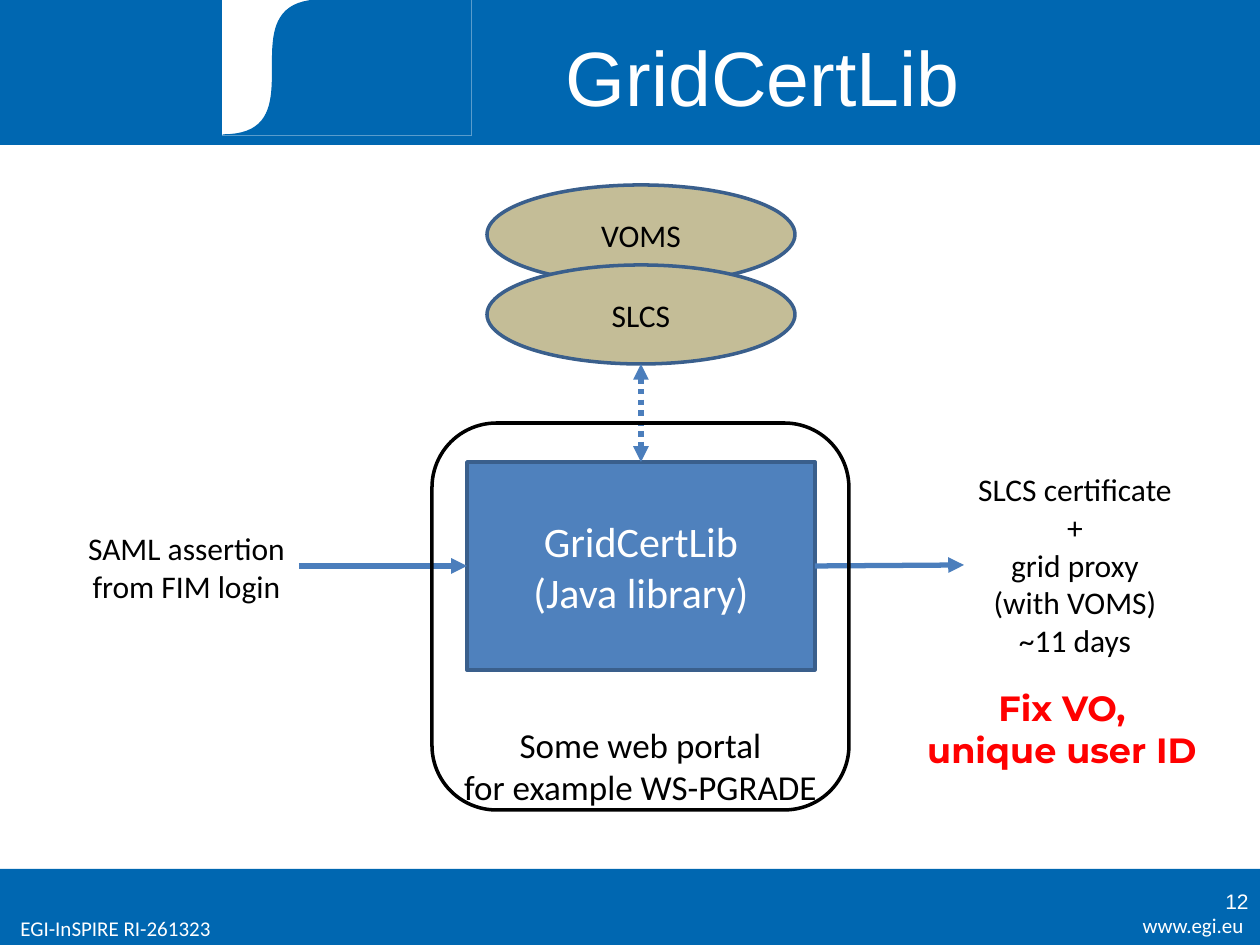
from lxml import etree
from pptx import Presentation
from pptx.dml.color import RGBColor
from pptx.enum.dml import MSO_LINE
from pptx.enum.shapes import MSO_CONNECTOR, MSO_SHAPE
from pptx.enum.text import MSO_ANCHOR, PP_ALIGN
from pptx.oxml.ns import qn
from pptx.util import Pt

RECT, OVAL, ROUND = MSO_SHAPE.RECTANGLE, MSO_SHAPE.OVAL, MSO_SHAPE.ROUNDED_RECTANGLE
LEFT, CENTER, RIGHT = PP_ALIGN.LEFT, PP_ALIGN.CENTER, PP_ALIGN.RIGHT
TOP, MIDDLE = MSO_ANCHOR.TOP, MSO_ANCHOR.MIDDLE
COLORS = {
    "band": "0067B1", "white": "FFFFFF", "black": "000000", "red": "FF0000",
    "box": "4F81BD", "edge": "3A5F8C", "arrow": "4B7EBC", "service": "C4BD97",
}
EMU_PER_PX = 914400 / 126


def px(n):
    return round(n * EMU_PER_PX)


def rgb(name):
    return RGBColor.from_string(COLORS[name])


def paint(s, fill, line, width):
    s.shadow.inherit = False
    if fill:
        s.fill.solid()
        s.fill.fore_color.rgb = rgb(fill)
    else:
        s.fill.background()
    if line:
        s.line.color.rgb = rgb(line)
        s.line.width = Pt(width)
    else:
        s.line.fill.background()


def add_shape(slide, kind, box, fill=None, line=None, width=2.0):
    s = slide.shapes.add_shape(kind, *map(px, box))
    paint(s, fill, line, width)
    return s


def write(s, lines, size, color="black", align=CENTER, anchor=MIDDLE,
          font="Calibri", bold=False, pad=6):
    """Set lines as one paragraph, parted by line breaks."""
    tf = s.text_frame
    tf.word_wrap = True
    tf.vertical_anchor = anchor
    tf.margin_top = tf.margin_bottom = px(pad)
    p = tf.paragraphs[0]
    p.alignment = align
    for i, line in enumerate(lines):
        if i:
            p.add_line_break()
        r = p.add_run()
        r.text = line
        r.font.size = Pt(size)
        r.font.name = font
        r.font.bold = bold
        r.font.color.rgb = rgb(color)


def add_text(slide, box, lines, size, **style):
    write(slide.shapes.add_textbox(*map(px, box)), lines, size, **style)


def add_arrow(slide, start, end, both=False, dash=None):
    s = slide.shapes.add_connector(MSO_CONNECTOR.STRAIGHT, *map(px, start + end))
    s.line.color.rgb = rgb("arrow")
    s.line.width = Pt(3)
    if dash:
        s.line.dash_style = dash
    ln = s.line._get_or_add_ln()
    for tag in ("a:headEnd", "a:tailEnd") if both else ("a:tailEnd",):
        etree.SubElement(ln, qn(tag), type="triangle")
    etree.SubElement(s._element.spPr, qn("a:effectLst"))


def add_swoosh(slide, x, y, w, h):
    """White tab whose right side is an S-curve cut by the blue band."""
    add_shape(slide, RECT, (x, y, w, h), "white", "white", 0.75)
    bend, steps = 0.4 * w, 40
    curve = []
    for i in range(steps + 1):
        t = i / steps
        u = 1 - t
        curve.append((px(x + bend * (3 * u * u * t + t ** 3)),
                      px(y + h * (u ** 3 + 3 * u * u * t))))
    fb = slide.shapes.build_freeform(px(x + w), px(y), scale=1.0)
    fb.add_line_segments([(px(x + w), px(y + h))] + curve, close=True)
    paint(fb.convert_to_shape(), "band", "band", 0.75)


def add_header(slide, x, y, w, h):
    add_shape(slide, RECT, (x, y, w, h), "band", "band", 0.75)
    add_swoosh(slide, x + 223, y, 248, 135)
    add_text(slide, (x + 292, y + 16, 942, 120), ["GridCertLib"], 44,
             color="white", font="Arial")


def add_footer(slide, x, y, w, h):
    add_shape(slide, RECT, (x, y, w, h), "band")
    add_text(slide, (x + w - 203, y + 38, 199, 39), ["www.egi.eu"], 12,
             color="white", align=RIGHT, anchor=TOP)
    add_text(slide, (x + 8, y + 41, 315, 39), ["EGI-InSPIRE RI-261323"], 12,
             color="white", align=LEFT, anchor=TOP)
    add_text(slide, (x + w - 292, y + 7, 293, 50), ["12"], 12,
             color="white", align=RIGHT, font="Arial")


def add_diagram(slide, x, y, w, h):
    # Library in the middle
    lib_x, lib_y, lib_w, lib_h = x + 467, y + 317, 348, 208
    mid_x, mid_y = lib_x + lib_w // 2, lib_y + lib_h // 2
    s = add_shape(slide, RECT, (lib_x, lib_y, lib_w, lib_h), "box", "edge")
    write(s, ["GridCertLib", "(Java library)"], 24, color="white")

    # Input from the left
    add_arrow(slide, (x + 299, mid_y), (lib_x, mid_y))
    add_text(slide, (x + 74, y + 378, 225, 89),
             ["SAML assertion", "from FIM login"], 18, anchor=TOP)

    # Output to the right
    add_arrow(slide, (lib_x + lib_w, mid_y), (x + 964, mid_y - 1))
    add_text(slide, (x + 964, y + 325, 222, 190),
             ["SLCS certificate", "+", "grid proxy", "(with VOMS)", "~11 days"],
             18, anchor=TOP, pad=0)

    # Overlapping services above
    oval_w, oval_h, oval_y, step = 308, 99, y + 40, 80
    for i, name in enumerate(["VOMS", "SLCS"]):
        box = (mid_x - oval_w // 2, oval_y + i * step, oval_w, oval_h)
        write(add_shape(slide, OVAL, box, "service", "edge"), [name], 18)
    add_arrow(slide, (mid_x, oval_y + step + oval_h), (mid_x, lib_y),
              both=True, dash=MSO_LINE.ROUND_DOT)

    # Portal frame and its label
    add_shape(slide, ROUND, (x + 432, y + 278, 417, 387), line="black")
    add_text(slide, (x + 432, y + 579, 417, 86),
             ["Some web portal", "for example WS-PGRADE"], 20, anchor=TOP, pad=0)

    # Remark
    add_text(slide, (x + 898, y + 535, 328, 97), ["Fix VO,", "unique user ID"], 20,
             color="red", font="Montserrat", bold=True, anchor=TOP)


def main():
    prs = Presentation()
    prs.slide_width, prs.slide_height = px(1260), px(945)
    slide = prs.slides.add_slide(prs.slide_layouts[6])
    add_footer(slide, 0, 869, 1260, 76)
    add_header(slide, 0, 0, 1260, 144)
    add_diagram(slide, 0, 145, 1260, 724)
    prs.save("out.pptx")


if __name__ == "__main__":
    main()
